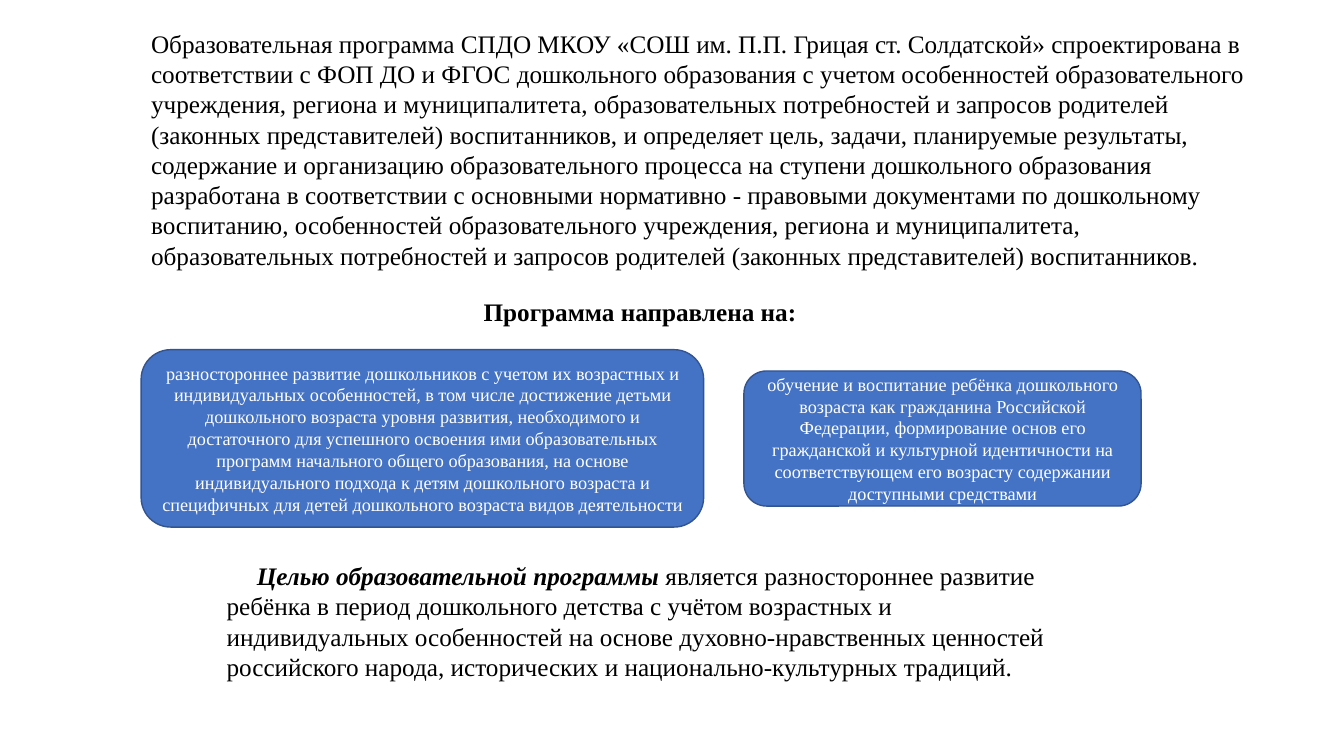
import pptx
import pptx.util
import pptx.dml.color
import pptx.enum.shapes
import pptx.enum.text

Pt = pptx.util.Pt
RGB = pptx.dml.color.RGBColor.from_string
ALIGN = pptx.enum.text.PP_ALIGN
ANCHOR = pptx.enum.text.MSO_ANCHOR

THEME = {
    "font": "Times New Roman",
    "text": "000000",
    "card": "4472C4",
    "card_line": "325491",
    "card_text": "FFFFFF",
    "body_size": 18,
    "card_size": 13,
}


def add_run(p, text, size, color, **style):
    r = p.add_run()
    r.text = text
    r.font.color.rgb = RGB(color)
    for name, value in {"name": THEME["font"], "size": Pt(size), **style}.items():
        setattr(r.font, name, value)


prs = pptx.Presentation()
prs.slide_width, prs.slide_height = Pt(960), Pt(540)
s = prs.slides.add_slide(prs.slide_layouts[6])

intro = (
    "Образовательная программа СПДО МКОУ «СОШ им. П.П. Грицая ст. Солдатской» "
    "спроектирована в соответствии с ФОП ДО и ФГОС дошкольного образования с учетом "
    "особенностей образовательного учреждения, региона и муниципалитета, образовательных "
    "потребностей и запросов родителей (законных представителей) воспитанников, и определяет "
    "цель, задачи, планируемые результаты, содержание и организацию образовательного процесса "
    "на ступени дошкольного образования разработана в соответствии с основными нормативно - "
    "правовыми документами по дошкольному воспитанию, особенностей образовательного учреждения, "
    "региона и муниципалитета, образовательных потребностей и запросов родителей (законных "
    "представителей) воспитанников."
)
goal = (
    " является разностороннее развитие ребёнка в период дошкольного детства с учётом возрастных "
    "и индивидуальных особенностей на основе духовно-нравственных ценностей российского народа, "
    "исторических и национально-культурных традиций."
)

texts = [
    ((100.8, 16.6, 807.1, 181.4), True, 0, [(intro, {})]),
    ((338.4, 208.1, 240.5, 28.8), False, 0, [("Программа направлена на:", {"bold": True})]),
    ((154.8, 396.7, 614.2, 94.3), True, 21.6, [
        ("Целью образовательной программы", {"bold": True, "italic": True}),
        (goal, {}),
    ]),
]
for box, wrap, indent, runs in texts:
    tf = s.shapes.add_textbox(*map(Pt, box)).text_frame
    tf.word_wrap = wrap
    tf.auto_size = pptx.enum.text.MSO_AUTO_SIZE.SHAPE_TO_FIT_TEXT
    p = tf.paragraphs[0]
    if indent:
        p._p.get_or_add_pPr().set("indent", str(Pt(indent)))
    for text, style in runs:
        add_run(p, text, THEME["body_size"], THEME["text"], **style)

cards = [
    ((100.8, 249.8, 401.8, 126.7),
     "разностороннее развитие дошкольников с учетом их возрастных и индивидуальных особенностей, "
     "в том числе достижение детьми дошкольного возраста уровня развития, необходимого и "
     "достаточного для успешного освоения ими образовательных программ начального общего "
     "образования, на основе индивидуального подхода к детям дошкольного возраста и специфичных "
     "для детей дошкольного возраста видов деятельности"),
    ((531.4, 265, 283.7, 96.5),
     "обучение и воспитание ребёнка дошкольного возраста как гражданина Российской Федерации, "
     "формирование основ его гражданской и культурной идентичности на соответствующем его "
     "возрасту содержании доступными средствами"),
]
for box, text in cards:
    sp = s.shapes.add_shape(
        pptx.enum.shapes.MSO_SHAPE.FLOWCHART_ALTERNATE_PROCESS, *map(Pt, box))
    sp.shadow.inherit = False
    sp.fill.solid()
    sp.fill.fore_color.rgb = RGB(THEME["card"])
    sp.line.color.rgb = RGB(THEME["card_line"])
    sp.line.width = Pt(1)
    tf = sp.text_frame
    for name, value in {"word_wrap": True, "vertical_anchor": ANCHOR.MIDDLE}.items():
        setattr(tf, name, value)
    p = tf.paragraphs[0]
    p.alignment = ALIGN.CENTER
    add_run(p, text, THEME["card_size"], THEME["card_text"])

prs.save("out.pptx")
